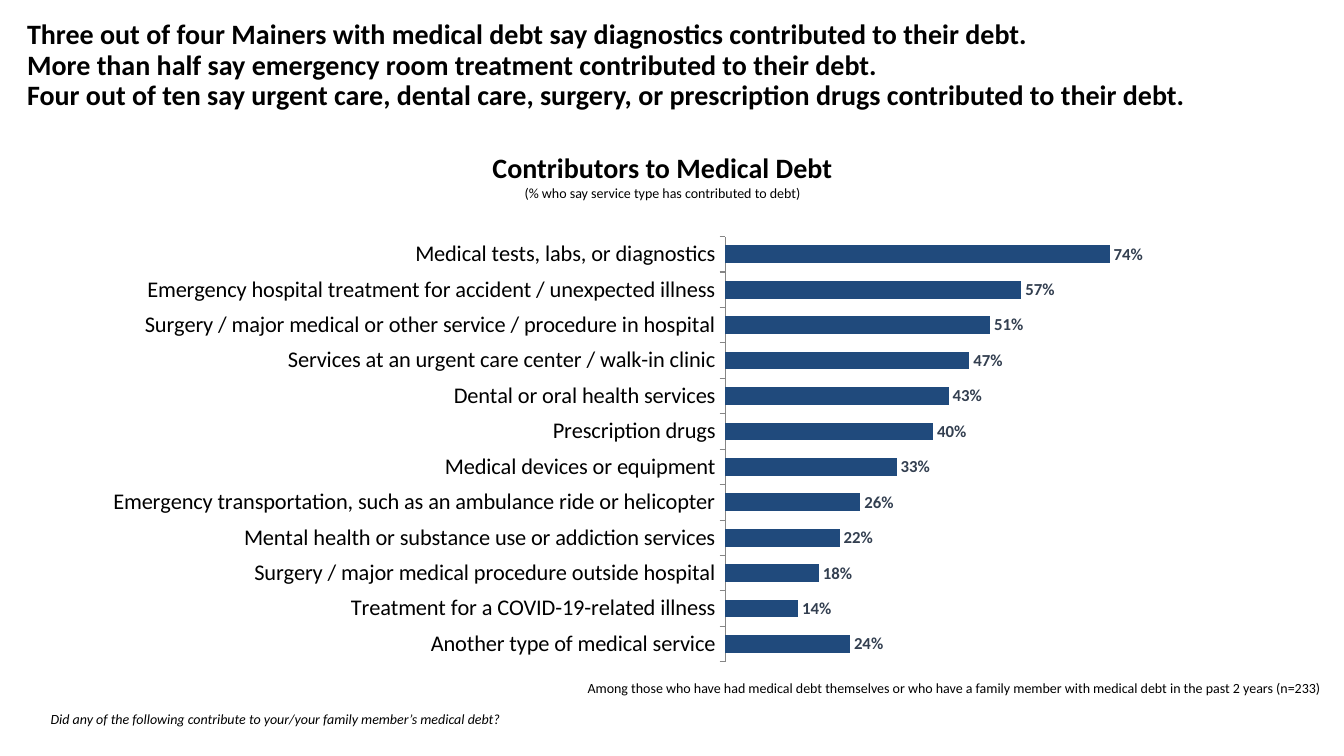
from dataclasses import dataclass, field
from typing import Any

import pptx
import pptx.chart.data
import pptx.dml.color
import pptx.enum.chart
import pptx.enum.text
import pptx.oxml
import pptx.oxml.ns
import pptx.util

Inches = pptx.util.Inches
ALIGN = pptx.enum.text.PP_ALIGN
ANCHOR = pptx.enum.text.MSO_ANCHOR

COLORS = {"text": "000000", "bar": "204A7C", "value": "333F50", "axis": "868686"}

CONTRIBUTORS = {
    "Medical tests, labs, or diagnostics": 0.74,
    "Emergency hospital treatment for accident / unexpected illness": 0.57,
    "Surgery / major medical or other service / procedure in hospital": 0.51,
    "Services at an urgent care center / walk-in clinic": 0.47,
    "Dental or oral health services": 0.43,
    "Prescription drugs": 0.40,
    "Medical devices or equipment": 0.33,
    "Emergency transportation, such as an ambulance ride or helicopter": 0.26,
    "Mental health or substance use or addiction services": 0.22,
    "Surgery / major medical procedure outside hospital": 0.18,
    "Treatment for a COVID-19-related illness": 0.14,
    "Another type of medical service": 0.24,
}


@dataclass
class Line:
    text: str
    size: int = 10
    bold: bool = False
    italic: bool = False
    spacing: dict[str, Any] = field(default_factory=dict)


@dataclass
class Caption:
    box: tuple[float, float, float, float]
    lines: list[Line]
    align: Any = ALIGN.LEFT
    anchor: Any = ANCHOR.TOP


CAPTIONS = [
    # Headline
    Caption(
        (0.17, 0.03, 13, 1.25),
        [Line(
            "Three out of four Mainers with medical debt say diagnostics contributed to their debt.\v"
            "More than half say emergency room treatment contributed to their debt.\v"
            "Four out of ten say urgent care, dental care, surgery, or prescription drugs "
            "contributed to their debt.",
            size=20, bold=True,
            spacing={"line_spacing": 0.9, "space_after": pptx.util.Pt(3)},
        )],
        anchor=ANCHOR.MIDDLE,
    ),
    # Survey question
    Caption(
        (0.33, 7, 4.8, 0.27),
        [Line("Did any of the following contribute to your/your family member’s medical debt?",
              italic=True)],
        align=ALIGN.CENTER,
    ),
    # Respondent base
    Caption(
        (5.57, 6.69, 7.62, 0.27),
        [Line("Among those who have had medical debt themselves or who have a family member "
              "with medical debt in the past 2 years (n=233)")],
        align=ALIGN.RIGHT,
    ),
    # Chart heading
    Caption(
        (2.11, 1.5, 8.92, 0.56),
        [Line("Contributors to Medical Debt", size=20, bold=True,
              spacing={"line_spacing": 0.85}),
         Line("(% who say service type has contributed to debt)")],
        align=ALIGN.CENTER,
    ),
]


def set_all(target: Any, values: dict[str, Any]) -> None:
    for name, value in values.items():
        setattr(target, name, value)


def rgb(name: str) -> pptx.dml.color.RGBColor:
    return pptx.dml.color.RGBColor.from_string(COLORS[name])


def style_font(font: Any, size: int, color: str = "text",
               bold: bool = False, italic: bool = False) -> None:
    set_all(font, {"name": "Calibri", "size": pptx.util.Pt(size),
                   "bold": bold, "italic": italic})
    font.color.rgb = rgb(color)


def draw_caption(slide: Any, caption: Caption) -> None:
    frame = slide.shapes.add_textbox(*map(Inches, caption.box)).text_frame
    set_all(frame, {"word_wrap": True, "vertical_anchor": caption.anchor})
    for index, line in enumerate(caption.lines):
        paragraph = frame.add_paragraph() if index else frame.paragraphs[0]
        paragraph.text = line.text
        set_all(paragraph, {"alignment": caption.align, **line.spacing})
        for run in paragraph.runs:
            style_font(run.font, line.size, bold=line.bold, italic=line.italic)


def place_plot(chart: Any, x: float, y: float, w: float, h: float) -> None:
    plot_area = chart.plots[0]._element.getparent()
    for old in plot_area.findall(pptx.oxml.ns.qn("c:layout")):
        plot_area.remove(old)
    parts = {"layoutTarget": "inner", "xMode": "edge", "yMode": "edge",
             "x": x, "y": y, "w": w, "h": h}
    body = "".join(f'<c:{tag} val="{value}"/>' for tag, value in parts.items())
    plot_area.insert(0, pptx.oxml.parse_xml(
        f'<c:layout {pptx.oxml.ns.nsdecls("c")}>'
        f"<c:manualLayout>{body}</c:manualLayout></c:layout>"))


def draw_contributors(slide: Any) -> None:
    data = pptx.chart.data.CategoryChartData(number_format="0%")
    data.categories = list(CONTRIBUTORS)
    data.add_series("Series 1", list(CONTRIBUTORS.values()))
    chart = slide.shapes.add_chart(
        pptx.enum.chart.XL_CHART_TYPE.BAR_CLUSTERED,
        *map(Inches, (-0.5, 1.47, 13, 5.32)), data).chart
    set_all(chart, {"has_legend": False, "has_title": False})
    style_font(chart.font, 10)
    place_plot(chart, 0.59, 0.165, 0.4, 0.79)
    place_plot(chart, 0.592, 0.165, 0.396, 0.793)

    # Axes
    services = chart.category_axis
    set_all(services, {"reverse_order": True, "has_major_gridlines": False,
                       "major_tick_mark": pptx.enum.chart.XL_TICK_MARK.OUTSIDE})
    style_font(services.tick_labels.font, 16)
    services.format.line.color.rgb = rgb("axis")
    set_all(chart.value_axis, {"visible": False, "has_major_gridlines": False,
                               "minimum_scale": 0, "maximum_scale": 1})

    # Bars and their percentages
    bars = chart.plots[0]
    set_all(bars, {"gap_width": 100, "vary_by_categories": False, "has_data_labels": True})
    fill = bars.series[0].format.fill
    fill.solid()
    fill.fore_color.rgb = rgb("bar")
    set_all(bars.data_labels, {
        "show_value": True, "number_format": "0%", "number_format_is_linked": False,
        "position": pptx.enum.chart.XL_LABEL_POSITION.OUTSIDE_END})
    style_font(bars.data_labels.font, 12, "value", bold=True)


def main() -> None:
    deck = pptx.Presentation()
    set_all(deck, {"slide_width": Inches(13.33), "slide_height": Inches(7.5)})
    slide = deck.slides.add_slide(deck.slide_layouts[6])
    draw_contributors(slide)
    for caption in CAPTIONS:
        draw_caption(slide, caption)
    deck.save("out.pptx")


if __name__ == "__main__":
    main()
